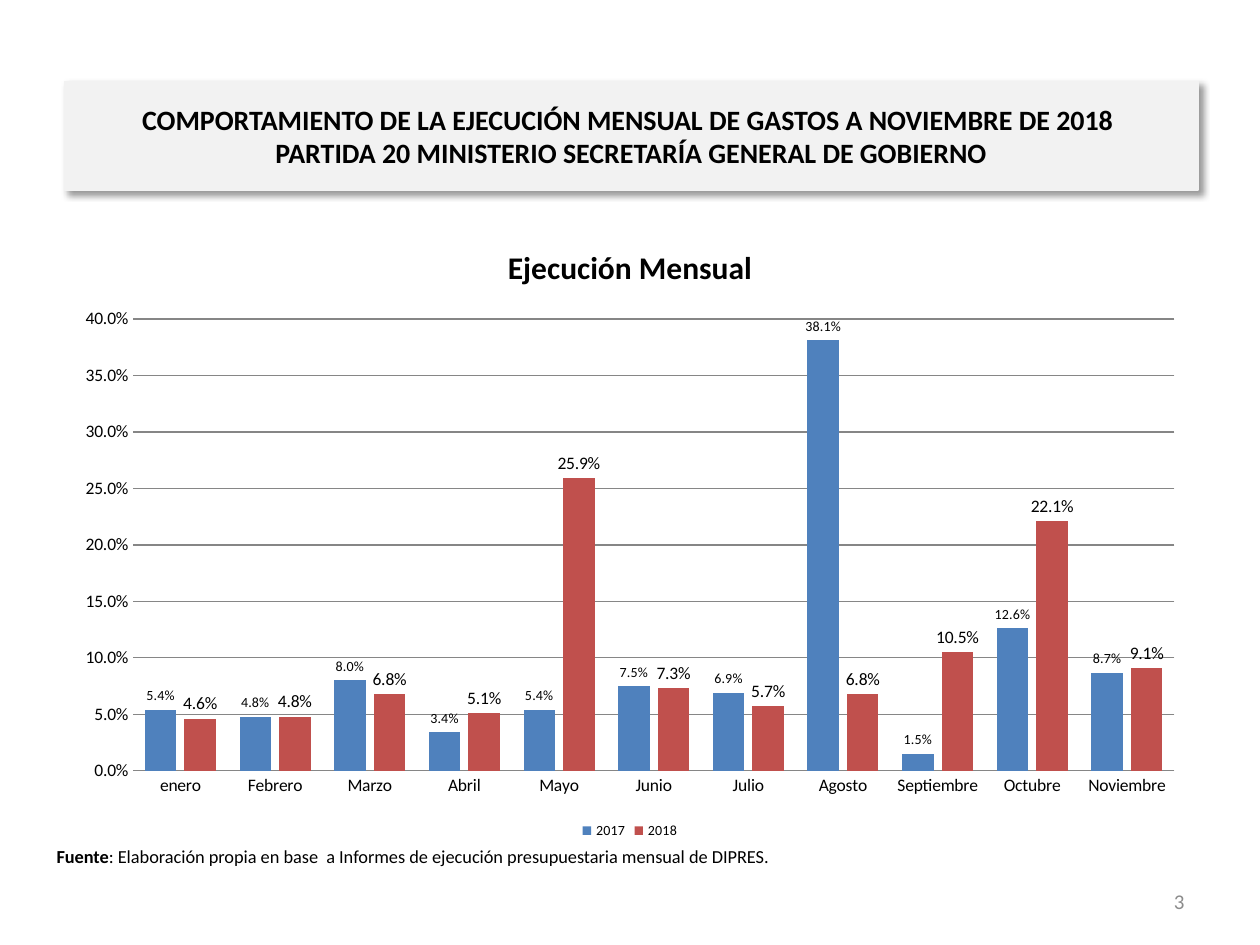
from dataclasses import dataclass

from lxml import etree
from pptx import Presentation
from pptx.chart.data import CategoryChartData
from pptx.dml.color import RGBColor
from pptx.enum.chart import XL_CHART_TYPE, XL_LABEL_POSITION, XL_LEGEND_POSITION, XL_TICK_MARK
from pptx.enum.shapes import MSO_SHAPE
from pptx.enum.text import MSO_ANCHOR, PP_ALIGN
from pptx.oxml.ns import qn
from pptx.util import Inches, Pt


@dataclass(frozen=True)
class Theme:
    font: str = "Calibri"
    text: str = "000000"
    muted: str = "8C8C8C"
    panel: str = "F2F2F2"
    grid: str = "868686"
    year_2017: str = "4F81BD"
    year_2018: str = "C0504D"
    heading: float = 16
    chart_title: float = 18
    page_number: float = 12
    source: float = 10.5
    chart: float = 10
    small: float = 8


theme = Theme()


def style_font(font, size, color=theme.text, bold=False):
    font.name = theme.font
    font.size = Pt(size)
    font.bold = bold
    font.color.rgb = RGBColor.from_string(color)


def add_drop_shadow(shape):
    shape.shadow.inherit = False
    effects = shape._element.spPr.find(qn("a:effectLst"))
    shadow = etree.SubElement(
        effects, qn("a:outerShdw"), blurRad=str(Pt(4)), dist=str(Pt(3)),
        dir=str(45 * 60000), algn="tl", rotWithShape="0")
    color = etree.SubElement(shadow, qn("a:srgbClr"), val=theme.text)
    etree.SubElement(color, qn("a:alpha"), val="40000")


deck = Presentation()
deck.slide_width, deck.slide_height = Inches(10), Inches(7.5)
page = deck.slides.add_slide(deck.slide_layouts[6])

# Page number
box = page.shapes.add_textbox(Inches(7.17), Inches(6.95), Inches(2.33), Inches(0.4))
box.text_frame.word_wrap = True
box.text_frame.vertical_anchor = MSO_ANCHOR.MIDDLE
para = box.text_frame.paragraphs[0]
para.text = "3"
para.alignment = PP_ALIGN.RIGHT
style_font(para.runs[0].font, theme.page_number, theme.muted)

# Heading panel
panel = page.shapes.add_shape(
    MSO_SHAPE.RECTANGLE, Inches(0.51), Inches(0.65), Inches(9), Inches(0.86))
panel.fill.solid()
panel.fill.fore_color.rgb = RGBColor.from_string(theme.panel)
panel.line.color.rgb = RGBColor.from_string(theme.panel)
panel.line.width = Pt(0.75)
add_drop_shadow(panel)
panel.text_frame.word_wrap = True
panel.text_frame.vertical_anchor = MSO_ANCHOR.MIDDLE
para = panel.text_frame.paragraphs[0]
para.text = ("COMPORTAMIENTO DE LA EJECUCIÓN MENSUAL DE GASTOS A NOVIEMBRE DE 2018 \v"
             "PARTIDA 20 MINISTERIO SECRETARÍA GENERAL DE GOBIERNO")
para.alignment = PP_ALIGN.CENTER
for span in para.runs:
    style_font(span.font, theme.heading, bold=True)

# Source line
box = page.shapes.add_textbox(Inches(0.35), Inches(6.66), Inches(9.19), Inches(0.4))
box.text_frame.word_wrap = True
para = box.text_frame.paragraphs[0]
for text, bold in (
    ("Fuente", True),
    (": Elaboración propia en base  a Informes de ejecución presupuestaria mensual de DIPRES.", False),
):
    span = para.add_run()
    span.text = text
    style_font(span.font, theme.source, bold=bold)

# Monthly execution chart
data = CategoryChartData(number_format="0.0%")
data.categories = ["enero", "Febrero", "Marzo", "Abril", "Mayo", "Junio", "Julio",
                   "Agosto", "Septiembre", "Octubre", "Noviembre"]
data.add_series("2017", [0.054, 0.048, 0.08, 0.034, 0.054, 0.075, 0.069,
                         0.381, 0.015, 0.126, 0.087])
data.add_series("2018", [0.046, 0.048, 0.068, 0.051, 0.259, 0.073, 0.057,
                         0.068, 0.105, 0.221, 0.091])
chart = page.shapes.add_chart(
    XL_CHART_TYPE.COLUMN_CLUSTERED, Inches(0.5), Inches(1.75), Inches(9), Inches(4.95), data).chart
style_font(chart.font, theme.chart)

chart.has_title = True
para = chart.chart_title.text_frame.paragraphs[0]
para.text = "Ejecución Mensual"
style_font(para.runs[0].font, theme.chart_title, bold=True)
chart.chart_title.include_in_layout = False

chart.has_legend = True
chart.legend.position = XL_LEGEND_POSITION.BOTTOM
chart.legend.include_in_layout = False
style_font(chart.legend.font, theme.small)

for axis in (chart.category_axis, chart.value_axis):
    axis.major_tick_mark = axis.minor_tick_mark = XL_TICK_MARK.NONE
    style_font(axis.tick_labels.font, theme.chart)

value_axis = chart.value_axis
value_axis.minimum_scale, value_axis.maximum_scale, value_axis.major_unit = 0, 0.4, 0.05
value_axis.tick_labels.number_format = "0.0%"
value_axis.tick_labels.number_format_is_linked = False
value_axis.format.line.fill.background()
value_axis.has_major_gridlines = True
for line in (value_axis.major_gridlines.format.line, chart.category_axis.format.line):
    line.color.rgb = RGBColor.from_string(theme.grid)
    line.width = Pt(0.75)

plot = chart.plots[0]
plot.gap_width, plot.overlap = 75, -25
plot.vary_by_categories = False
series_styles = ((theme.year_2017, theme.small), (theme.year_2018, theme.chart))
for series, (color, label_size) in zip(plot.series, series_styles):
    series.format.fill.solid()
    series.format.fill.fore_color.rgb = RGBColor.from_string(color)
    labels = series.data_labels
    labels.show_value = True
    labels.position = XL_LABEL_POSITION.OUTSIDE_END
    labels.number_format = "0.0%"
    labels.number_format_is_linked = False
    style_font(labels.font, label_size)

deck.save("out.pptx")
